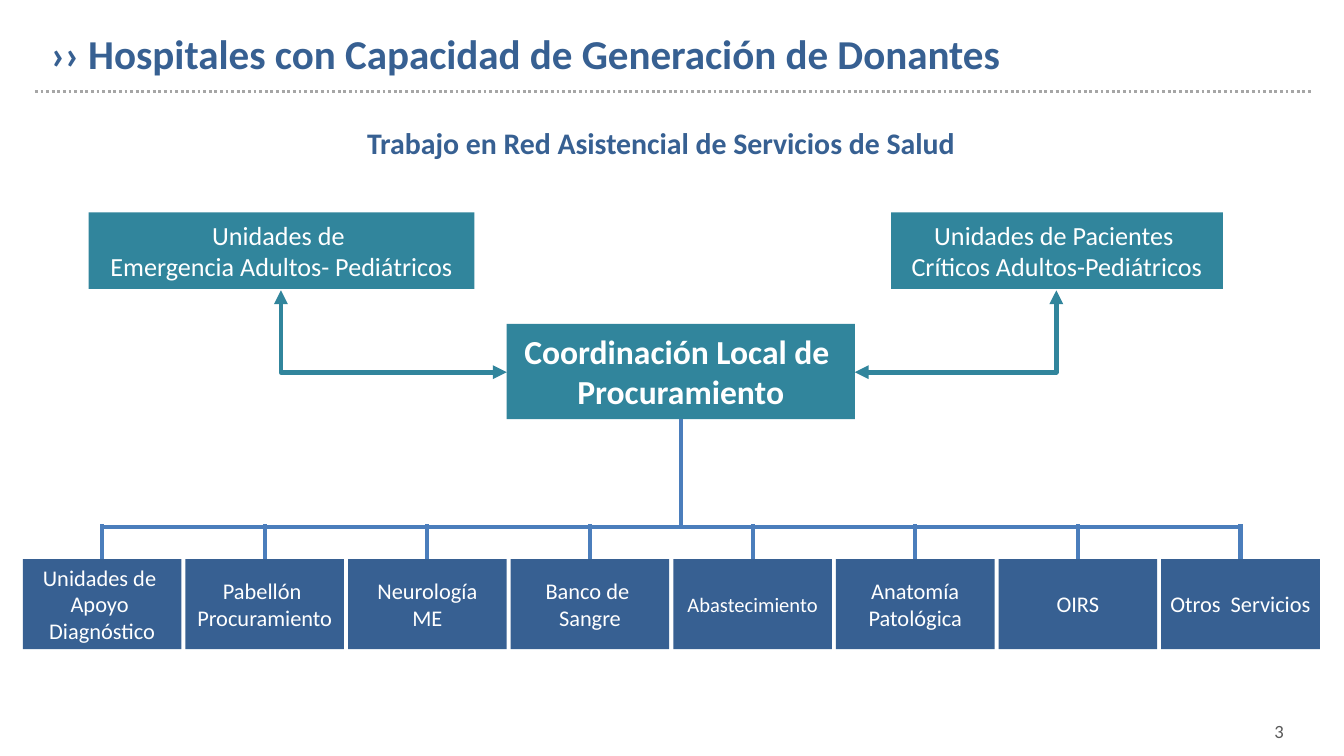
import pptx
import pptx.util
import pptx.dml.color
import pptx.enum.dml
import pptx.enum.shapes
import pptx.enum.text
import pptx.oxml.ns
import lxml.etree
from dataclasses import dataclass

Inches = pptx.util.Inches
Align = pptx.enum.text.PP_ALIGN
Anchor = pptx.enum.text.MSO_ANCHOR
Link = pptx.enum.shapes.MSO_CONNECTOR


@dataclass
class Theme:
    font: str = "Calibri"
    navy: str = "376092"
    teal: str = "31859C"
    blue: str = "4B7EBC"
    gray: str = "A6A6A6"
    dark: str = "595959"
    white: str = "FFFFFF"
    title: int = 22
    hub: int = 18
    head: int = 16
    unit: int = 14
    team: int = 12
    small: int = 11
    page: int = 10


theme = Theme()
deck = pptx.Presentation()
# Widescreen, 16 by 9
deck.slide_width, deck.slide_height = Inches(10), Inches(10 * 9 / 16)
slide = deck.slides.add_slide(deck.slide_layouts[6])


def add_text(box, text, size, color, fill=None, bold=False,
             align=Align.CENTER, anchor=Anchor.TOP, wrap=True):
    """Add a text box, or a filled rectangle when fill is given."""
    place = [Inches(n) for n in box]
    if fill:
        shape = slide.shapes.add_shape(
            pptx.enum.shapes.MSO_SHAPE.RECTANGLE, *place)
        shape.shadow.inherit = False
        shape.fill.solid()
        shape.fill.fore_color.rgb = pptx.dml.color.RGBColor.from_string(fill)
        shape.line.fill.background()
    else:
        shape = slide.shapes.add_textbox(*place)
    frame = shape.text_frame
    frame.word_wrap = wrap
    frame.vertical_anchor = anchor
    frame.text = text
    for para in frame.paragraphs:
        para.alignment = align
        para.font.name = theme.font
        for run in para.runs:
            run.font.name = theme.font
            run.font.size = pptx.util.Pt(size)
            run.font.bold = bold
            run.font.color.rgb = pptx.dml.color.RGBColor.from_string(color)
    return frame


def add_line(start, end, color, width, kind=Link.STRAIGHT):
    """Add a connector without shadow."""
    line = slide.shapes.add_connector(
        kind, *[Inches(n) for n in (*start, *end)])
    line.line.color.rgb = pptx.dml.color.RGBColor.from_string(color)
    line.line.width = pptx.util.Pt(width)
    lxml.etree.SubElement(line._element.spPr, pptx.oxml.ns.qn("a:effectLst"))
    return line


# Title, dotted rule and heading
add_text((0.28, 0.11, 9.56, 0.57),
         "›› Hospitales con Capacidad de Generación de Donantes",
         theme.title, theme.navy, bold=True, align=Align.LEFT,
         anchor=Anchor.MIDDLE)
rule = add_line((0.26, 0.68), (9.76, 0.68), theme.gray, 1.5)
rule.line.dash_style = pptx.enum.dml.MSO_LINE.ROUND_DOT
add_text((2.05, 0.88, 5.74, 0.37),
         "Trabajo en Red Asistencial de Servicios de Salud",
         theme.head, theme.navy, bold=True)

# Local coordination and the two kinds of unit
add_text((3.77, 2.41, 2.59, 0.71), "Coordinación Local de \nProcuramiento",
         theme.hub, theme.white, theme.teal, bold=True, wrap=False)
units = [
    (0.66, 2.87, "Unidades de \nEmergencia Adultos- Pediátricos"),
    (6.63, 2.47, "Unidades de Pacientes \nCríticos Adultos-Pediátricos"),
]
for left, width, text in units:
    add_text((left, 1.58, width, 0.57), text, theme.unit, theme.white,
             theme.teal, wrap=False)

# Elbow arrows: the unturned box shares its centre with the turned one
top, mid = 2.16, 2.77
for unit, hub, turn in [(2.09, 3.77, 270), (7.86, 6.36, 90)]:
    x, y = (unit + hub) / 2, (top + mid) / 2
    wide, tall = mid - top, abs(unit - hub)
    side = 1 if unit > hub else -1
    elbow = add_line((x - side * wide / 2, y - tall / 2),
                     (x + side * wide / 2, y + tall / 2),
                     theme.teal, 2.5, Link.ELBOW)
    props = elbow._element.spPr
    props.find(pptx.oxml.ns.qn("a:xfrm")).set("rot", str(turn * 60000))
    props.find(pptx.oxml.ns.qn("a:prstGeom")).set("prst", "bentConnector2")
    stroke = props.find(pptx.oxml.ns.qn("a:ln"))
    for tip in ("a:headEnd", "a:tailEnd"):
        lxml.etree.SubElement(stroke, pptx.oxml.ns.qn(tip), type="triangle")

# Row of teams, each with its drop line
teams = [
    "Unidades de \vApoyo \nDiagnóstico", "Pabellón \nProcuramiento",
    "Neurología\nME", "Banco de \nSangre", "Abastecimiento",
    "Anatomía\nPatológica", "OIRS", "Otros  Servicios",
]
first, step, wide = 0.17, 1.21, 1.18
mids = [first + step * i + wide / 2 for i in range(len(teams))]
for x, text in zip(mids, teams):
    size = theme.small if text == "Abastecimiento" else theme.team
    frame = add_text((x - wide / 2, 4.16, wide, 0.67), text, size,
                     theme.white, theme.navy, anchor=Anchor.MIDDLE)
    frame.margin_left = frame.margin_right = Inches(0.04)
    add_line((x, 3.9), (x, 4.16), theme.blue, 2.25)

# Trunk and crossbar
add_line((5.07, 3.12), (5.07, 3.92), theme.blue, 2.25)
add_line((mids[0], 3.92), (mids[-1], 3.92), theme.blue, 2.25)

# Page number
add_text((9.2, 5.31, 0.45, 0.27), "3", theme.page, theme.dark,
         align=Align.RIGHT)

deck.save("out.pptx")
